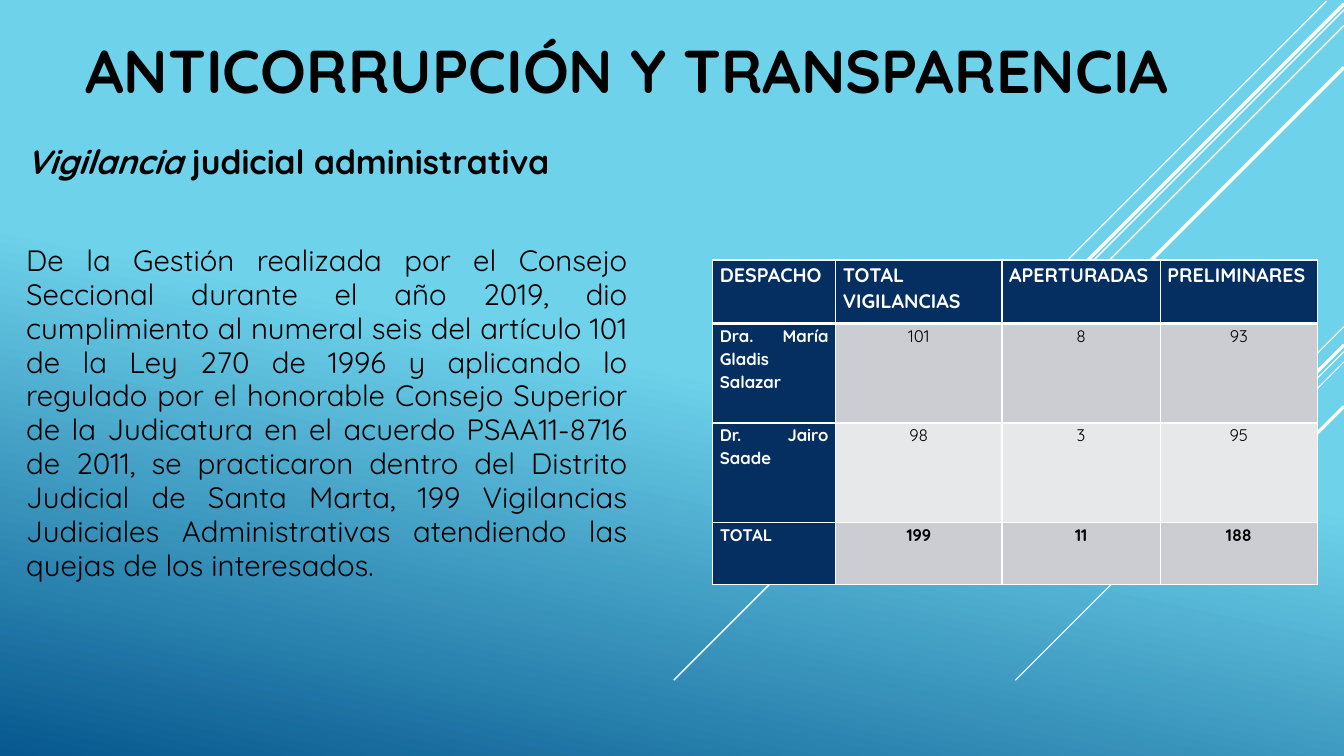
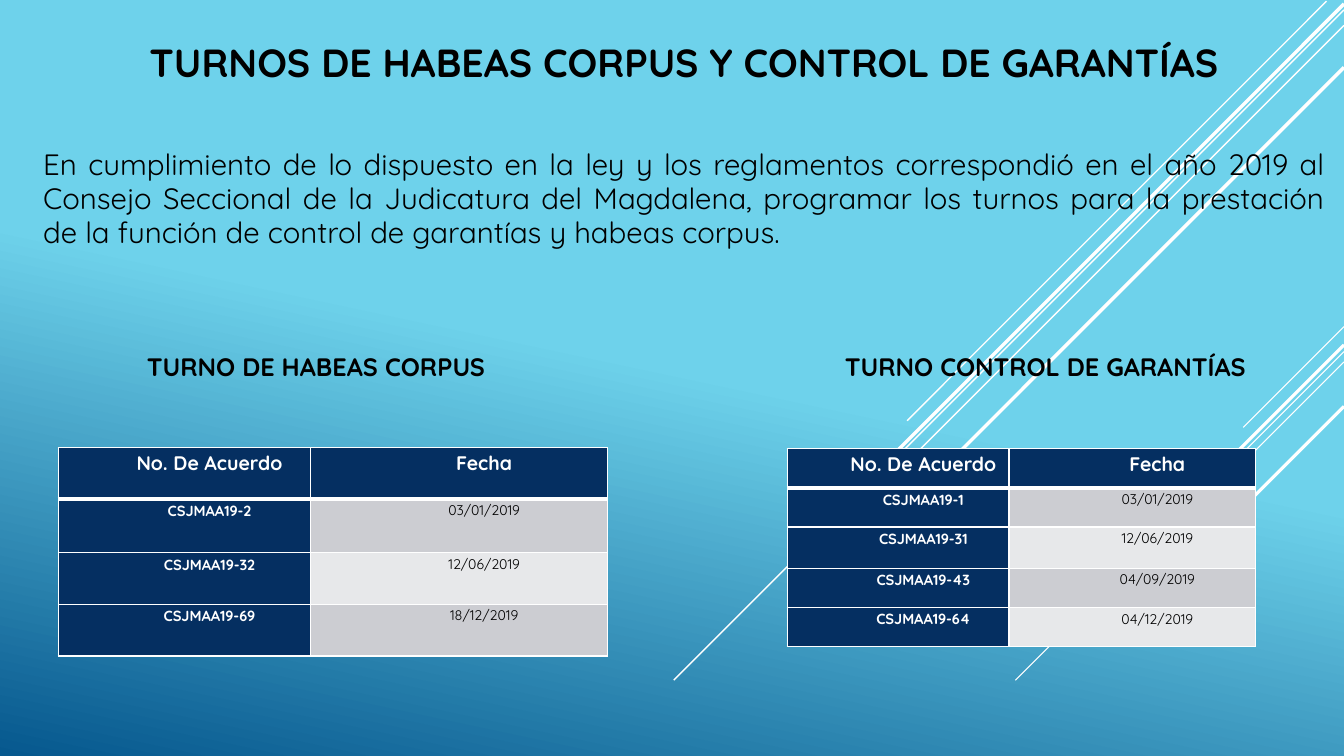
"""Build two slides on judicial oversight and on-call schedules."""
import dataclasses
import typing

import lxml.etree
import pptx
import pptx.dml.color
import pptx.enum.text
import pptx.oxml.ns
import pptx.presentation
import pptx.slide
import pptx.table
import pptx.text.text
import pptx.util

Cm = pptx.util.Cm
Pt = pptx.util.Pt
ALIGN = pptx.enum.text.PP_ALIGN
ANCHOR = pptx.enum.text.MSO_ANCHOR
qn = pptx.oxml.ns.qn

FONT = "Quicksand"
BLACK, WHITE = "000000", "FFFFFF"
SKY, DEEP, NAVY = "6ED2EB", "06588E", "052F61"
BANDS = ("CCCDD2", "E7E8EA")
SLIDE_W, SLIDE_H = 33.87, 19.05
CELL_MARGIN = 0.18
BODY_SIZE = 21
BODY_GAP = 39
BODY_SPACING = 0.96


class Ray(typing.NamedTuple):
    x: float
    y: float
    reach: float
    weight: float


class Run(typing.NamedTuple):
    text: str
    size: float
    bold: bool = False
    italic: bool = False
    color: str = BLACK


class Box(typing.NamedTuple):
    left: float
    top: float
    width: float
    height: float


@dataclasses.dataclass
class Para:
    runs: list[Run]
    align: ALIGN = ALIGN.LEFT
    before: float = 0
    after: float = 0
    spacing: float = 1.0


@dataclasses.dataclass
class Grid:
    left: float
    top: float
    cols: list[float]
    heights: list[float]
    cells: list[list[str]]
    key_size: float = 10.5
    value_size: float = 10
    key_align: ALIGN = ALIGN.CENTER
    indent: float = 1.27
    spacing: float = 1.15
    after: float = 0
    total_row: bool = False


RAYS = [
    Ray(SLIDE_W, 8.23, 2.54, 0.75),
    Ray(SLIDE_W, 8.86, 8.28, 0.75),
    Ray(SLIDE_W, 9.12, 5.26, 0.75),
    Ray(SLIDE_W, 8.69, 4.85, 2.25),
    Ray(SLIDE_W, 10.24, 3.53, 2.25),
    Ray(33.43, 0.03, 10.57, 1),
    Ray(SLIDE_W, 0.25, 16.89, 1),
    Ray(SLIDE_W, 0.64, 13.77, 1),
    Ray(SLIDE_W, 0.1, 13.47, 2.5),
    Ray(SLIDE_W, 1.7, 12.07, 2.5),
]

OVERSIGHT = Grid(
    17.96, 6.55, [3.1, 4.19, 3.99, 3.96], [1.6, 2.51, 2.51, 1.57],
    [
        ["DESPACHO", "TOTAL VIGILANCIAS", "APERTURADAS", "PRELIMINARES"],
        ["Dra. María Gladis Salazar", "101", "8", "93"],
        ["Dr. Jairo Saade", "98", "3", "95"],
        ["TOTAL", "199", "11", "188"],
    ],
    key_size=12, value_size=12, key_align=ALIGN.JUSTIFY,
    indent=0, spacing=1.1, after=6, total_row=True,
)

SHIFT_HEADER = ["No. De Acuerdo", "Fecha"]
GUARANTEES = Grid(
    19.84, 11.3, [5.59, 6.2], [0.99, 0.99, 1.04, 0.99, 0.99],
    [
        SHIFT_HEADER,
        ["CSJMAA19-1", "03/01/2019"],
        ["CSJMAA19-31", "12/06/2019"],
        ["CSJMAA19-43", "04/09/2019"],
        ["CSJMAA19-64", "04/12/2019"],
    ],
)
HABEAS = Grid(
    1.47, 11.28, [6.35, 7.49], [1.3, 1.35, 1.3, 1.3],
    [
        SHIFT_HEADER,
        ["CSJMAA19-2", "03/01/2019"],
        ["CSJMAA19-32", "12/06/2019"],
        ["CSJMAA19-69", "18/12/2019"],
    ],
)

OVERSIGHT_TEXT = (
    "De la Gestión realizada por el Consejo Seccional durante el año 2019, dio "
    "cumplimiento al numeral seis del artículo 101 de la Ley 270 de 1996 y aplicando "
    "lo regulado por el honorable Consejo Superior de la Judicatura en el acuerdo "
    "PSAA11-8716 de 2011, se practicaron dentro del Distrito Judicial de Santa Marta, "
    "199 Vigilancias Judiciales Administrativas atendiendo las quejas de los interesados."
)
SHIFT_TEXT = (
    "En cumplimiento de lo dispuesto en la ley y los reglamentos correspondió en el "
    "año 2019 al Consejo Seccional de la Judicatura del Magdalena, programar los turnos "
    "para la prestación de la función de control de garantías y habeas corpus."
)


def rgb(color: str) -> pptx.dml.color.RGBColor:
    return pptx.dml.color.RGBColor.from_string(color)


def write(tf: pptx.text.text.TextFrame, paras: list[Para]) -> None:
    for i, para in enumerate(paras):
        p = tf.add_paragraph() if i else tf.paragraphs[0]
        p.alignment = para.align
        p.space_before, p.space_after = Pt(para.before), Pt(para.after)
        p.line_spacing = para.spacing
        for run in para.runs:
            r = p.add_run()
            r.text = run.text
            r.font.name, r.font.size = FONT, Pt(run.size)
            r.font.bold, r.font.italic = run.bold, run.italic
            r.font.color.rgb = rgb(run.color)


def add_text(s: pptx.slide.Slide, box: Box, paras: list[Para],
             anchor: ANCHOR = ANCHOR.TOP) -> None:
    tf = s.shapes.add_textbox(*map(Cm, box)).text_frame
    tf.word_wrap = True
    tf.vertical_anchor = anchor
    write(tf, paras)


def body(text: str) -> Para:
    return Para([Run(text, BODY_SIZE)], ALIGN.JUSTIFY, BODY_GAP, 6, BODY_SPACING)


def set_borders(cell: pptx.table._Cell, row: int) -> None:
    tc_pr = cell._tc.get_or_add_tcPr()
    weights = {"L": 1, "R": 1, "T": 3 if row == 1 else 1, "B": 1 if row else 3}
    for side, weight in weights.items():
        ln = lxml.etree.SubElement(tc_pr, qn(f"a:ln{side}"), w=str(Pt(weight)))
        fill = lxml.etree.SubElement(ln, qn("a:solidFill"))
        lxml.etree.SubElement(fill, qn("a:srgbClr"), val=WHITE)


def add_grid(s: pptx.slide.Slide, grid: Grid) -> None:
    sp = s.shapes.add_table(
        len(grid.heights), len(grid.cols), Cm(grid.left), Cm(grid.top),
        Cm(sum(grid.cols)), Cm(sum(grid.heights)))
    table = sp.table
    table.horz_banding = False
    for col, width in zip(table.columns, grid.cols):
        col.width = Cm(width)
    for row, height in zip(table.rows, grid.heights):
        row.height = Cm(height)
    last = len(grid.cells) - 1
    for i, texts in enumerate(grid.cells):
        for j, text in enumerate(texts):
            cell = table.cell(i, j)
            dark = i == 0 or j == 0
            size = 14 if i == 0 else grid.value_size if j else grid.key_size
            bold = dark or (grid.total_row and i == last)
            set_borders(cell, i)
            cell.fill.solid()
            cell.fill.fore_color.rgb = rgb(NAVY if dark else BANDS[(i - 1) % 2])
            cell.margin_left = Cm(CELL_MARGIN + grid.indent)
            cell.margin_right = Cm(CELL_MARGIN)
            cell.margin_top = cell.margin_bottom = 0
            run = Run(text, size, bold, color=WHITE if dark else BLACK)
            align = grid.key_align if dark else ALIGN.CENTER
            write(cell.text_frame, [Para([run], align, 0, grid.after, grid.spacing)])


def set_background(prs: pptx.presentation.Presentation) -> None:
    fill = prs.slide_master.background.fill
    fill.gradient()
    fill.gradient_angle = 258
    for stop, (position, color) in zip(fill.gradient_stops, [(0.49, SKY), (1, DEEP)]):
        stop.position = position
        stop.color.rgb = rgb(color)


def add_slide(prs: pptx.presentation.Presentation) -> pptx.slide.Slide:
    s = prs.slides.add_slide(prs.slide_layouts[6])
    for ray in RAYS:
        sp = s.shapes.add_connector(
            pptx.enum.shapes.MSO_CONNECTOR.STRAIGHT, Cm(ray.x), Cm(ray.y),
            Cm(ray.x - ray.reach), Cm(ray.y + ray.reach))
        sp.line.color.rgb = rgb(WHITE)
        sp.line.width = Pt(ray.weight)
        lxml.etree.SubElement(sp._element.spPr, qn("a:effectLst"))
    return s


def build_oversight(prs: pptx.presentation.Presentation) -> None:
    s = add_slide(prs)
    title = Run("ANTICORRUPCIÓN Y TRANSPARENCIA", 43.2, True)
    add_text(s, Box(1.9, 0.79, 31.32, 2), [Para([title])], ANCHOR.BOTTOM)
    heading = [Run("Vigilancia ", 24, True, True),
               Run("judicial administrativa", 24, True)]
    add_text(s, Box(0.41, 3.43, 15.65, 14.96),
             [Para(heading, after=6), body(OVERSIGHT_TEXT)])
    add_grid(s, OVERSIGHT)


def build_shifts(prs: pptx.presentation.Presentation) -> None:
    s = add_slide(prs)
    title = Run("TURNOS DE HABEAS CORPUS Y CONTROL DE GARANTÍAS", 28, True)
    add_text(s, Box(0.84, 0.84, 32.79, 8.15),
             [Para([title], ALIGN.CENTER, after=6), body(SHIFT_TEXT)])
    for grid in (GUARANTEES, HABEAS):
        add_grid(s, grid)
    for left, label in ((3.45, "TURNO DE HABEAS CORPUS"),
                        (21.04, "TURNO CONTROL DE GARANTÍAS")):
        add_text(s, Box(left, 8.74, 12, 1.02), [Para([Run(label, 18, True)])])


def main() -> None:
    prs = pptx.Presentation()
    prs.slide_width, prs.slide_height = Cm(SLIDE_W), Cm(SLIDE_H)
    set_background(prs)
    build_oversight(prs)
    build_shifts(prs)
    prs.save("out.pptx")


if __name__ == "__main__":
    main()
